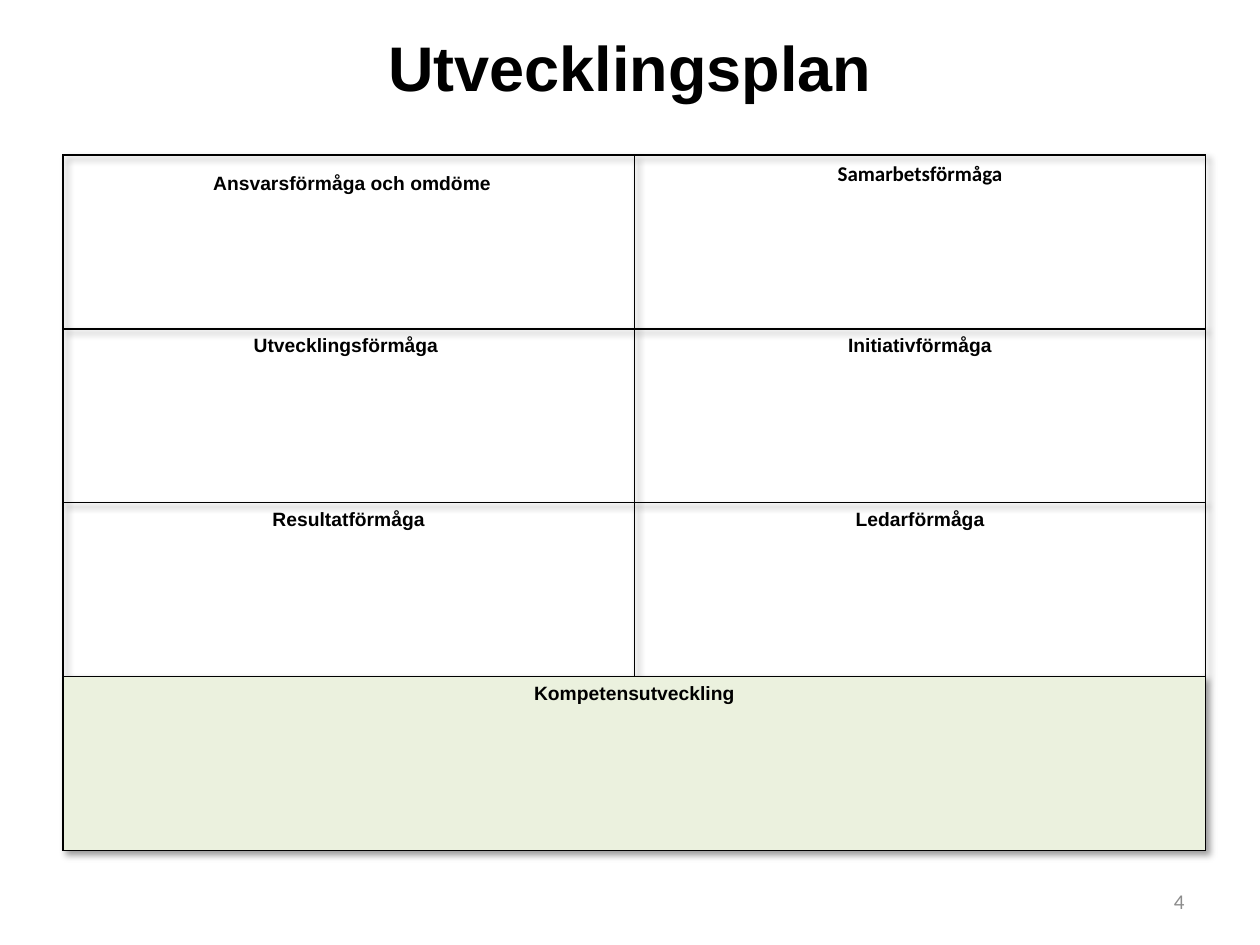
import pptx
import pptx.util
import pptx.dml.color
import pptx.enum.text
import pptx.oxml
import pptx.oxml.ns

Inches = pptx.util.Inches
Pt = pptx.util.Pt
ALIGN = pptx.enum.text.PP_ALIGN
ANCHOR = pptx.enum.text.MSO_ANCHOR
COLORS = {"black": "000000", "green": "EBF1DE", "gray": "8C8C8C"}
NAMESPACE = pptx.oxml.ns.nsdecls("a")


def write(frame, text, size, font="Arial", color="black", bold=True, align=ALIGN.CENTER):
    para = frame.paragraphs[0]
    para.alignment = align
    span = para.add_run()
    span.text = text
    span.font.size = Pt(size)
    span.font.name = font
    span.font.bold = bold
    span.font.color.rgb = pptx.dml.color.RGBColor.from_string(COLORS[color])


def add_box(left, top, width, height, anchor):
    box = page.shapes.add_textbox(Inches(left), Inches(top), Inches(width), Inches(height))
    box.text_frame.word_wrap = True
    box.text_frame.vertical_anchor = anchor
    return box.text_frame


deck = pptx.Presentation()
deck.slide_width = Inches(10)
deck.slide_height = Inches(7.5)
page = deck.slides.add_slide(deck.slide_layouts[5])

title = page.shapes.title
title.left, title.top = Inches(0.5), Inches(0.3)
title.width, title.height = Inches(9), Inches(0.46)
title.text_frame.vertical_anchor = ANCHOR.MIDDLE
write(title.text_frame, "Utvecklingsplan", 36)

abilities = [
    ["", "Samarbetsförmåga"],
    ["Utvecklingsförmåga ", "Initiativförmåga"],
    ["Resultatförmåga", "Ledarförmåga"],
    ["Kompetensutveckling", ""],
]
plan = page.shapes.add_table(
    4, 2, Inches(0.5), Inches(1.23), Inches(9.07), Inches(5.52)
).table
plan.first_row = False
plan.horz_banding = False
plan._tbl.tblPr.insert(0, pptx.oxml.parse_xml(
    f'<a:effectLst {NAMESPACE}><a:outerShdw blurRad="50800" dist="38100" dir="2700000" '
    'algn="tl" rotWithShape="0"><a:srgbClr val="000000"><a:alpha val="40000"/>'
    '</a:srgbClr></a:outerShdw></a:effectLst>'))
plan.cell(3, 0).merge(plan.cell(3, 1))

for row, names in enumerate(abilities):
    for column, name in enumerate(names):
        cell = plan.cell(row, column)
        properties = cell._tc.get_or_add_tcPr()
        for side in ("lnL", "lnR", "lnT", "lnB"):
            properties.append(pptx.oxml.parse_xml(
                f'<a:{side} {NAMESPACE} w="12700"><a:solidFill>'
                f'<a:srgbClr val="{COLORS["black"]}"/></a:solidFill></a:{side}>'))
        if row == 3:
            cell.fill.solid()
            cell.fill.fore_color.rgb = pptx.dml.color.RGBColor.from_string(COLORS["green"])
        else:
            cell.fill.background()
        if name == "Samarbetsförmåga":
            write(cell.text_frame, name, 12, "Calibri")
        elif name:
            write(cell.text_frame, name, 11)

responsibility = add_box(0.67, 1.31, 4.25, 0.47, ANCHOR.TOP)
write(responsibility, "Ansvarsförmåga och omdöme", 11)

page_number = add_box(7.17, 6.95, 2.33, 0.4, ANCHOR.MIDDLE)
write(page_number, "4", 12, "Calibri", "gray", False, ALIGN.RIGHT)

deck.save("out.pptx")
